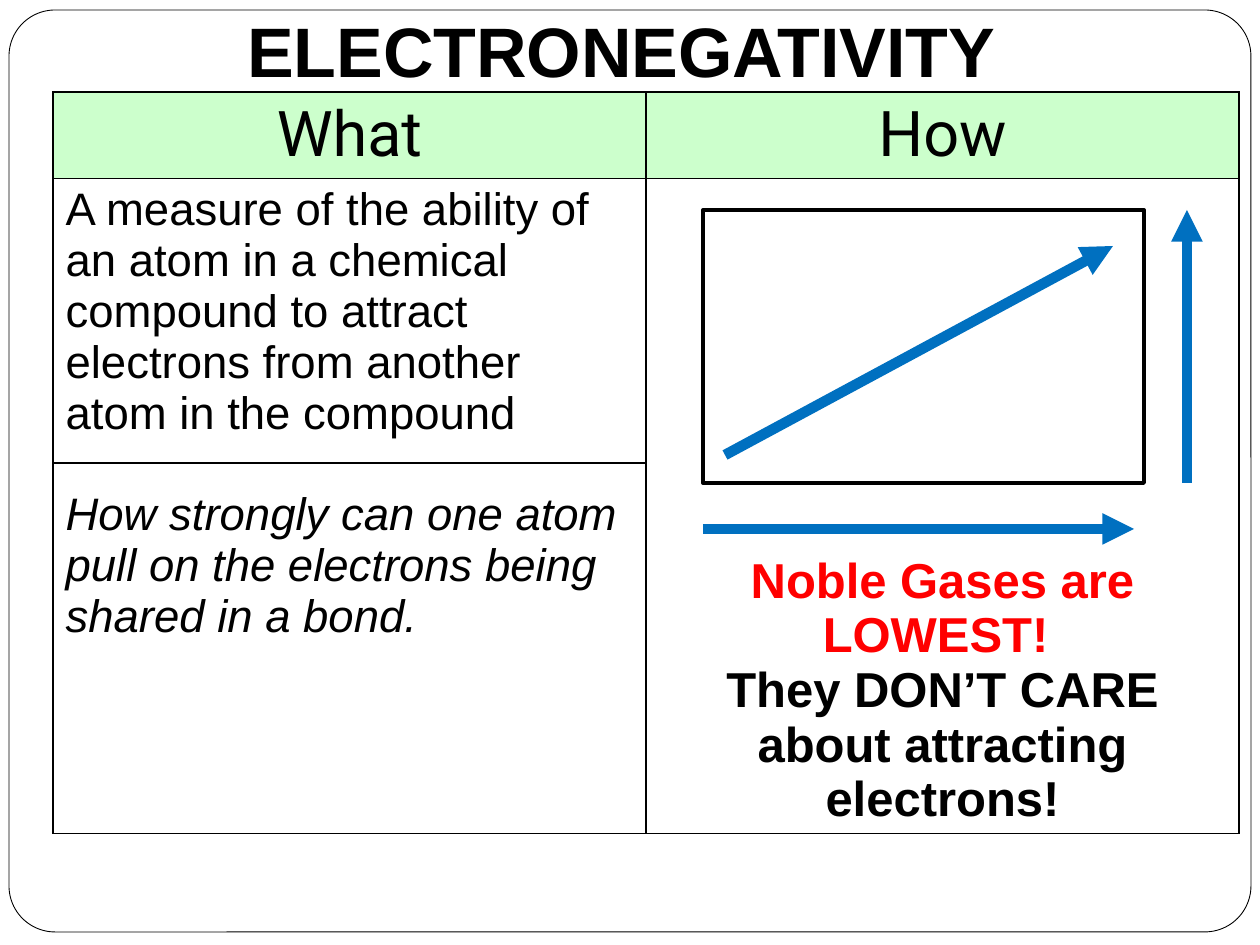
import pptx
import pptx.util
import pptx.dml.color
import pptx.enum.shapes
import pptx.enum.text
import pptx.oxml.ns
from lxml import etree

SCALE = 914400 / 126
BLACK, GREEN, BLUE, RED = "000000", "CCFFCC", "0070C0", "FF0000"
CENTER = pptx.enum.text.PP_ALIGN.CENTER
LEFT = pptx.enum.text.PP_ALIGN.LEFT
TOP = pptx.enum.text.MSO_ANCHOR.TOP
BOTTOM = pptx.enum.text.MSO_ANCHOR.BOTTOM
SHAPES = pptx.enum.shapes.MSO_SHAPE
qn = pptx.oxml.ns.qn


def px(*lengths):
    return [pptx.util.Emu(round(length * SCALE)) for length in lengths]


def color(value):
    return pptx.dml.color.RGBColor.from_string(value)


deck = pptx.Presentation()
deck.slide_width, deck.slide_height = px(1260, 945)
page = deck.slides.add_slide(deck.slide_layouts[5])

frame = page.shapes.add_shape(SHAPES.ROUNDED_RECTANGLE, *px(9, 10, 1242, 922))
frame.adjustments[0] = 0.05
frame.shadow.inherit = False
frame.fill.solid()
frame.fill.fore_color.rgb = color("FFFFFF")
frame.line.color.rgb = color(BLACK)
frame.line.width = pptx.util.Pt(0.5)
page.shapes._spTree.insert(2, frame._element)

title = page.shapes.title
title.left, title.top, title.width, title.height = px(44, 13, 1155, 92)
title.text_frame.text = "ELECTRONEGATIVITY"
title.text_frame.auto_size = pptx.enum.text.MSO_AUTO_SIZE.NONE
title.text_frame.vertical_anchor = BOTTOM
title.text_frame.margin_bottom = px(13)[0]
heading = title.text_frame.paragraphs[0]
heading.alignment = CENTER
heading.font.name = "Arial"
heading.font.size = pptx.util.Pt(40)
heading.font.bold = True
heading.font.color.rgb = color(BLACK)

table = page.shapes.add_table(2, 2, *px(53, 92, 1186, 741)).table
table.first_row = False
table.horz_banding = False
for column in table.columns:
    column.width = px(593)[0]
for row, height in zip(table.rows, (86, 655)):
    row.height = px(height)[0]

definition = "A measure of the ability of an atom in a chemical compound to attract electrons from another atom in the compound"
question = "How strongly can one atom pull on the electrons being shared in a bond."
noble_gases = "Noble Gases are LOWEST! \vThey DON’T CARE about attracting electrons!"
cells = [
    (0, 0, "What", "Roboto", 36, CENTER, TOP),
    (0, 1, "How", "Roboto", 36, CENTER, TOP),
    (1, 0, definition + "\n" + question, "Arial", 26, LEFT, TOP),
    (1, 1, noble_gases, "Arial", 28, CENTER, BOTTOM),
]
for row, column, text, font, size, alignment, anchor in cells:
    cell = table.cell(row, column)
    cell.text_frame.text = text
    cell.vertical_anchor = anchor
    for para in cell.text_frame.paragraphs:
        para.alignment = alignment
        for span in para.runs:
            span.font.name = font
            span.font.size = pptx.util.Pt(size)
            span.font.color.rgb = color(BLACK)
    properties = cell._tc.get_or_add_tcPr()
    for side in ("a:lnL", "a:lnR", "a:lnT", "a:lnB"):
        border = etree.SubElement(properties, qn(side), w="12700")
        paint = etree.SubElement(border, qn("a:solidFill"))
        etree.SubElement(paint, qn("a:srgbClr"), val=BLACK)
    if row == 0:
        cell.fill.solid()
        cell.fill.fore_color.rgb = color(GREEN)
    else:
        cell.fill.background()

question_para = table.cell(1, 0).text_frame.paragraphs[1]
question_para.space_before = pptx.util.Pt(29)
question_para.runs[0].font.italic = True
lowest, reason = table.cell(1, 1).text_frame.paragraphs[0].runs
lowest.font.bold = reason.font.bold = True
lowest.font.color.rgb = color(RED)

periodic_table = page.shapes.add_shape(SHAPES.RECTANGLE, *px(703, 210, 441, 273))
periodic_table.shadow.inherit = False
periodic_table.fill.background()
periodic_table.line.color.rgb = color(BLACK)
periodic_table.line.width = pptx.util.Pt(2.25)

lines = [
    (703, 529, 1134, 529, BLUE, 6, True),
    (1187, 483, 1187, 210, BLUE, 6, True),
    (725, 455, 1113, 246, BLUE, 6, True),
    (53, 463, 645, 463, BLACK, 0.75, False),
]
for x1, y1, x2, y2, stroke, width, arrow in lines:
    line = page.shapes.add_connector(
        pptx.enum.shapes.MSO_CONNECTOR.STRAIGHT, *px(x1, y1, x2, y2))
    line.line.color.rgb = color(stroke)
    line.line.width = pptx.util.Pt(width)
    if arrow:
        etree.SubElement(line.line._get_or_add_ln(), qn("a:tailEnd"), type="triangle")
    etree.SubElement(line._element.spPr, qn("a:effectLst"))

deck.save("out.pptx")
